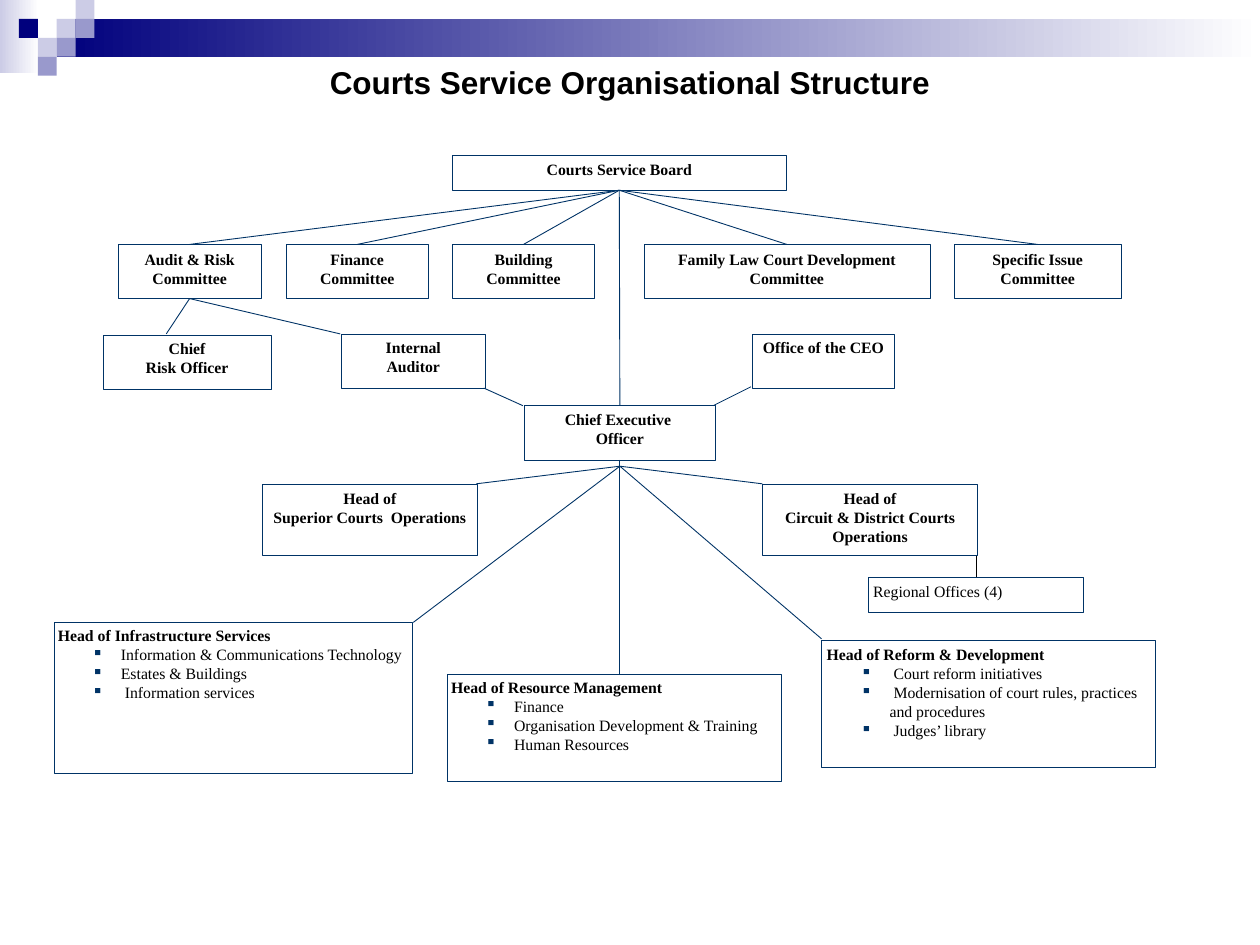
from copy import deepcopy
from lxml.etree import SubElement
from pptx import Presentation
from pptx.dml.color import RGBColor
from pptx.enum.shapes import MSO_CONNECTOR, MSO_SHAPE
from pptx.enum.text import MSO_ANCHOR, PP_ALIGN
from pptx.oxml.ns import qn
from pptx.util import Inches, Pt

NAVY = RGBColor(0x00, 0x00, 0x7D)
BLUE = RGBColor(0x00, 0x33, 0x66)
PALE = RGBColor(0xCC, 0xCC, 0xE6)
LILAC = RGBColor(0x99, 0x99, 0xCC)
BLACK = RGBColor(0, 0, 0)
WHITE = RGBColor(255, 255, 255)

TITLE = "Courts Service Organisational Structure"
TOP, BOTTOM = 0, 2
TILE = 0.15
BANDS = [(0, 0, 0.31, 0.58, PALE), (0.45, 0.15, 9.55, 0.3, NAVY)]
TILES = [(3, 1, PALE), (4, 0, PALE), (4, 1, LILAC), (2, 2, PALE),
         (1, 1, NAVY), (3, 2, LILAC), (2, 3, LILAC)]

BOXES = {
    "board": ((3.59, 1.23, 2.65, 0.28), 0.04, "Courts Service Board"),
    "audit": ((0.94, 1.94, 1.13, 0.43), 0.04, "Audit & Risk\vCommittee"),
    "finance": ((2.27, 1.94, 1.13, 0.43), 0.04, "Finance\vCommittee"),
    "building": ((3.59, 1.94, 1.13, 0.43), 0.04, "Building\vCommittee"),
    "family": ((5.11, 1.94, 2.27, 0.43), 0.04,
               "Family Law Court Development Committee"),
    "issue": ((7.57, 1.94, 1.33, 0.43), 0.04, "Specific Issue Committee"),
    "risk": ((0.82, 2.66, 1.33, 0.43), 0.03, "Chief\nRisk Officer"),
    "auditor": ((2.71, 2.65, 1.14, 0.43), 0.03, "Internal\vAuditor"),
    "office": ((5.97, 2.65, 1.13, 0.43), 0.03, "Office of the CEO"),
    "chief": ((4.16, 3.22, 1.52, 0.43), 0.03, "Chief Executive \nOfficer"),
    "superior": ((2.08, 3.84, 1.71, 0.57), 0.04,
                 "Head of\vSuperior Courts  Operations"),
    "circuit": ((6.05, 3.84, 1.71, 0.57), 0.04,
                "Head of\vCircuit & District Courts Operations"),
}
REGION = ((6.89, 4.58, 1.71, 0.28), 0.04, "Regional Offices (4)")
LISTS = [
    ((0.43, 4.94, 2.84, 1.2), 0.03, "Head of Infrastructure Services",
     ["Information & Communications Technology", "Estates & Buildings",
      " Information services"]),
    ((3.55, 5.35, 2.65, 0.85), 0.03, "Head of Resource Management",
     ["Finance", "Organisation Development & Training", "Human Resources"]),
    ((6.52, 5.08, 2.65, 1.01), 0.04, "Head of Reform & Development",
     [" Court reform initiatives",
      " Modernisation of court rules, practices and procedures",
      " Judges’ library"]),
]

HUB = (4.92, 3.7)
LINKS = [(("board", BOTTOM), (name, TOP)) for name in
         ("audit", "finance", "building", "family", "issue", "chief")]
LINKS += [(HUB, end) for end in
          ((3.78, 3.84), (6.05, 3.84), (3.28, 4.94), (6.52, 5.07))]
LINKS += [
    (("audit", BOTTOM), (1.32, 2.65)),
    (("audit", BOTTOM), (2.7, 2.65)),
    (("chief", BOTTOM), (4.92, 5.35)),
    ((3.84, 3.08), (4.15, 3.22)),
    ((5.96, 3.07), (5.66, 3.22)),
]
DROP = ((7.75, 4.41), (7.75, 4.58))


def add_rect(slide, place):
    box = slide.shapes.add_shape(MSO_SHAPE.RECTANGLE, *map(Inches, place))
    box.shadow.inherit = False
    return box


def add_tile(slide, place, color, fade=False):
    tile = add_rect(slide, place)
    tile.line.fill.background()
    if fade:
        tile.fill.gradient()
        tile.fill.gradient_angle = 0
        for stop, tone in zip(tile.fill.gradient_stops, (color, WHITE)):
            stop.color.rgb = tone
    else:
        tile.fill.solid()
        tile.fill.fore_color.rgb = color


def style(para, font, size, bold):
    for run in para.runs:
        run.font.name = font
        run.font.size = Pt(size)
        run.font.bold = bold
        run.font.color.rgb = BLACK
    for gap in para._p.findall(qn("a:br")):
        gap.append(deepcopy(para.runs[0].font._element))


def add_box(slide, place, inset, text, align=PP_ALIGN.CENTER, bold=True):
    box = add_rect(slide, place)
    box.fill.background()
    box.line.color.rgb = BLUE
    box.line.width = Pt(0.25)
    frame = box.text_frame
    frame.word_wrap = True
    frame.vertical_anchor = MSO_ANCHOR.TOP
    frame.margin_left = frame.margin_right = Inches(inset)
    frame.margin_top = frame.margin_bottom = Inches(inset)
    frame.text = text
    for para in frame.paragraphs:
        para.alignment = align
        style(para, "Times New Roman", 9, bold)
    return box


def add_bullet(para):
    para.level = 1
    props = para._p.get_or_add_pPr()
    props.set("marL", str(Inches(0.5)))
    props.set("indent", str(Inches(-0.23)))
    tint = SubElement(props, qn("a:buClr"))
    SubElement(tint, qn("a:srgbClr"), val=str(BLUE))
    SubElement(props, qn("a:buChar"), char="▪")


def add_list(slide, place, inset, head, items):
    box = add_box(slide, place, inset, "\n".join([head] + items), PP_ALIGN.LEFT)
    for para in box.text_frame.paragraphs[1:]:
        add_bullet(para)
        for run in para.runs:
            run.font.bold = False


def add_link(slide, boxes, start, end, color=BLUE, width=0.5):
    points = [(0, 0) if isinstance(spot[0], str) else spot
              for spot in (start, end)]
    link = slide.shapes.add_connector(
        MSO_CONNECTOR.STRAIGHT, *[Inches(n) for spot in points for n in spot])
    for spot, join in ((start, link.begin_connect), (end, link.end_connect)):
        if isinstance(spot[0], str):
            join(boxes[spot[0]], spot[1])
    link.line.color.rgb = color
    link.line.width = Pt(width)
    SubElement(link._element.spPr, qn("a:effectLst"))


def add_title(slide):
    title = slide.shapes.title
    title.left, title.top, title.width, title.height = map(
        Inches, (0, 0.45, 10, 0.4))
    frame = title.text_frame
    frame.text = TITLE
    frame.vertical_anchor = MSO_ANCHOR.MIDDLE
    frame.paragraphs[0].alignment = PP_ALIGN.CENTER
    style(frame.paragraphs[0], "Arial", 18, True)


def main():
    deck = Presentation()
    deck.slide_width, deck.slide_height = Inches(10), Inches(7.5)
    slide = deck.slides.add_slide(deck.slide_layouts[5])
    add_title(slide)
    for *place, color in BANDS:
        add_tile(slide, place, color, fade=True)
    for col, row, color in TILES:
        add_tile(slide, (col * TILE, row * TILE, TILE, TILE), color)
    boxes = {name: add_box(slide, *data) for name, data in BOXES.items()}
    boxes["board"].line.width = Pt(0.5)
    add_box(slide, *REGION, align=PP_ALIGN.LEFT, bold=False)
    for data in LISTS:
        add_list(slide, *data)
    for start, end in LINKS:
        add_link(slide, boxes, start, end)
    add_link(slide, boxes, *DROP, color=BLACK, width=0.75)
    deck.save("out.pptx")


if __name__ == "__main__":
    main()
